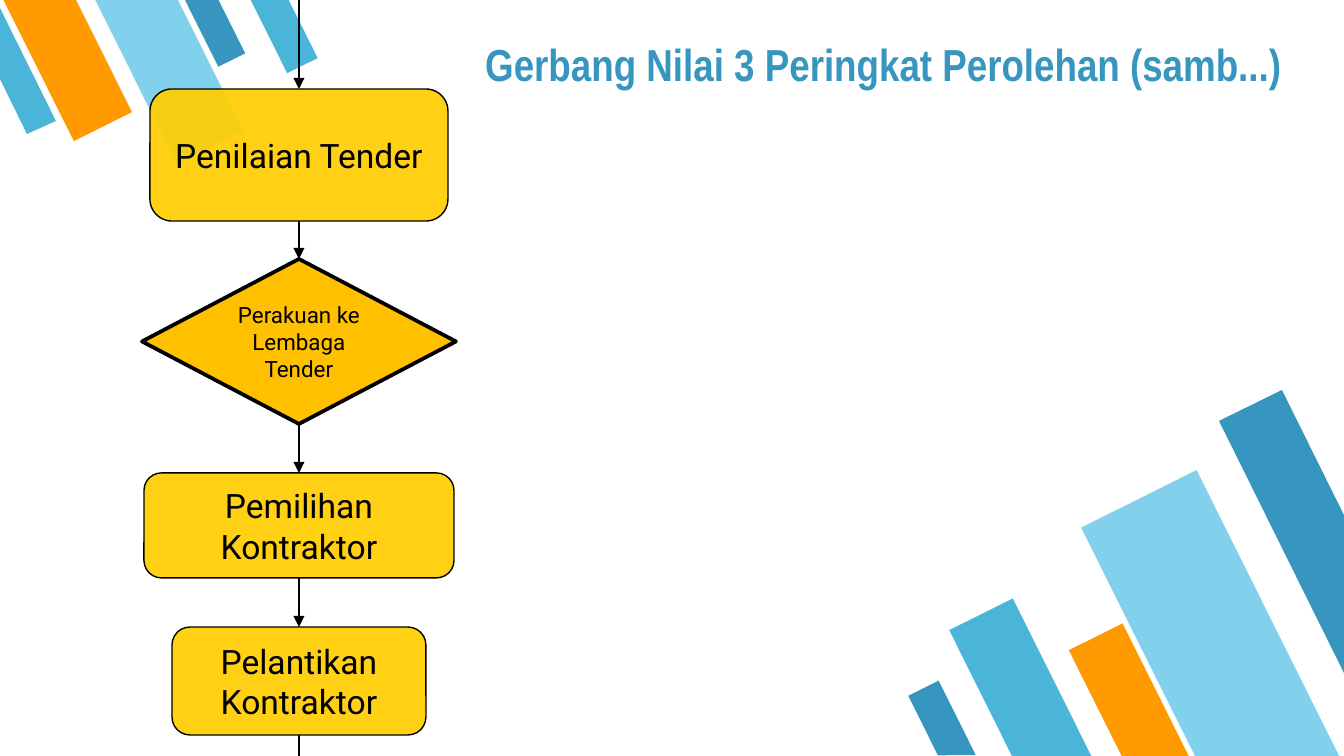
from typing import NamedTuple, Optional

from lxml import etree
from pptx import Presentation, util as u
from pptx.dml.color import RGBColor
from pptx.enum import shapes, text
from pptx.oxml import ns

WIDTH, HEIGHT = 1344, 756
EMU_PER_PX = u.Inches(10) / WIDTH
FLOW_CENTRE = 299
TOP, BOTTOM = 0, 2  # connection sites

COLOURS = {
    "deep": "3796BF",
    "mid": "4BB5D9",
    "pale": "81D1EC",
    "orange": "FF9900",
    "step": "FFCD00",
    "decision": "FFC000",
    "ink": "000000",
}


class Bar(NamedTuple):
    x: int
    y: int
    w: int
    h: int
    colour: str


class Step(NamedTuple):
    label: str
    top: int
    w: int
    h: int
    decision: bool = False


# Slanted bars in the two corners
LOWER_BARS = [
    Bar(985, 605, 71, 177, "mid"),
    Bar(1146, 482, 129, 321, "pale"),
    Bar(1099, 629, 60, 149, "orange"),
    Bar(925, 684, 34, 83, "deep"),
]
UPPER_BARS = [
    Bar(200, -11, 30, 75, "deep"),
    Bar(35, -24, 65, 159, "orange"),
    Bar(132, -27, 74, 184, "pale"),
    Bar(267, -13, 34, 83, "mid"),
]
# Bars cut off by the slide edge
LOWER_CUT = [(1282, 390), (1219, 421), (1344, 673), (1344, 515)]
UPPER_CUT = [(27, 134), (56, 121), (0, 8), (0, 79)]

STEPS = [
    Step("Penilaian Tender", 89, 298, 132),
    Step("Perakuan ke Lembaga Tender", 259, 314, 165, decision=True),
    Step("Pemilihan Kontraktor", 473, 310, 105),
    Step("Pelantikan Kontraktor", 627, 254, 108),
]


def px(length: float) -> int:
    return round(length * EMU_PER_PX)


def rgb(colour: str) -> RGBColor:
    return RGBColor.from_string(COLOURS[colour])


def paint(shape, colour: str, line_width: Optional[float] = None) -> None:
    shape.shadow.inherit = False
    shape.fill.solid()
    shape.fill.fore_color.rgb = rgb(colour)
    if line_width is None:
        shape.line.fill.background()
    else:
        shape.line.color.rgb = rgb("ink")
        shape.line.width = u.Pt(line_width)


def write(shape, words: str, *, size: int, font: str = "Roboto", colour: str = "ink",
          bold: bool = False, align=text.PP_ALIGN.CENTER,
          anchor=text.MSO_ANCHOR.MIDDLE, inset_y: float = 0.1) -> None:
    frame = shape.text_frame
    frame.word_wrap = True
    frame.vertical_anchor = anchor
    frame.margin_left = frame.margin_right = u.Inches(0.1)
    frame.margin_top = frame.margin_bottom = u.Inches(inset_y)
    paragraph = frame.paragraphs[0]
    paragraph.alignment = align
    run = paragraph.add_run()
    run.text = words
    run.font.size = u.Pt(size)
    run.font.name = font
    run.font.bold = bold
    run.font.color.rgb = rgb(colour)


def draw_bar(slide, bar: Bar, rotation: float) -> None:
    shape = slide.shapes.add_shape(shapes.MSO_SHAPE.FLOWCHART_MANUAL_INPUT,
                                   px(bar.x), px(bar.y), px(bar.w), px(bar.h))
    shape.rotation = rotation
    shape._element.spPr.find(ns.qn("a:xfrm")).set("flipH", "1")
    paint(shape, bar.colour)


def draw_cut_bar(slide, corners: list, colour: str) -> None:
    start, *rest = corners
    builder = slide.shapes.build_freeform(*start, scale=EMU_PER_PX)
    builder.add_line_segments(rest, close=True)
    paint(builder.convert_to_shape(), colour)


def draw_step(slide, step: Step):
    kind = (shapes.MSO_SHAPE.FLOWCHART_DECISION if step.decision
            else shapes.MSO_SHAPE.ROUNDED_RECTANGLE)
    shape = slide.shapes.add_shape(kind, px(FLOW_CENTRE - step.w / 2), px(step.top),
                                   px(step.w), px(step.h))
    if step.decision:
        paint(shape, "decision", 2)
        write(shape, step.label, size=12, inset_y=0.05)
    else:
        paint(shape, "step", 0.75)
        tint = shape._element.spPr.find(ns.qn("a:solidFill"))[0]
        etree.SubElement(tint, ns.qn("a:alpha"), val="92000")
        write(shape, step.label, size=18)
    return shape


def draw_link(slide, top: int, bottom: int, source=None, target=None) -> None:
    link = slide.shapes.add_connector(shapes.MSO_CONNECTOR.STRAIGHT, px(FLOW_CENTRE),
                                      px(top), px(FLOW_CENTRE), px(bottom))
    if source is not None:
        link.begin_connect(source, BOTTOM)
    if target is not None:
        link.end_connect(target, TOP)
    link.line.color.rgb = rgb("ink")
    link.line.width = u.Pt(0.75)
    properties = link._element.spPr
    if target is not None:
        etree.SubElement(properties.find(ns.qn("a:ln")), ns.qn("a:tailEnd"), type="triangle")
    etree.SubElement(properties, ns.qn("a:effectLst"))


def main() -> None:
    deck = Presentation()
    deck.slide_width, deck.slide_height = px(WIDTH), px(HEIGHT)
    slide = deck.slides.add_slide(deck.slide_layouts[6])

    # Corner decoration
    for bar in LOWER_BARS:
        draw_bar(slide, bar, 153.5)
    draw_cut_bar(slide, LOWER_CUT, "deep")
    for bar in UPPER_BARS:
        draw_bar(slide, bar, 333.5)
    draw_cut_bar(slide, UPPER_CUT, "mid")

    # Title
    title = slide.shapes.add_textbox(px(472), px(23), px(860), px(54))
    write(title, "Gerbang Nilai 3 Peringkat Perolehan (samb...)", size=24,
          font="Arial Narrow", colour="deep", bold=True,
          align=text.PP_ALIGN.LEFT, anchor=text.MSO_ANCHOR.TOP)

    # Flow: links enter from the top edge and leave by the bottom edge
    boxes = [draw_step(slide, step) for step in STEPS]
    starts = [0] + [step.top + step.h for step in STEPS]
    ends = [step.top for step in STEPS] + [HEIGHT]
    for top, bottom, source, target in zip(starts, ends, [None] + boxes, boxes + [None]):
        draw_link(slide, top, bottom, source, target)

    deck.save("out.pptx")


if __name__ == "__main__":
    main()
